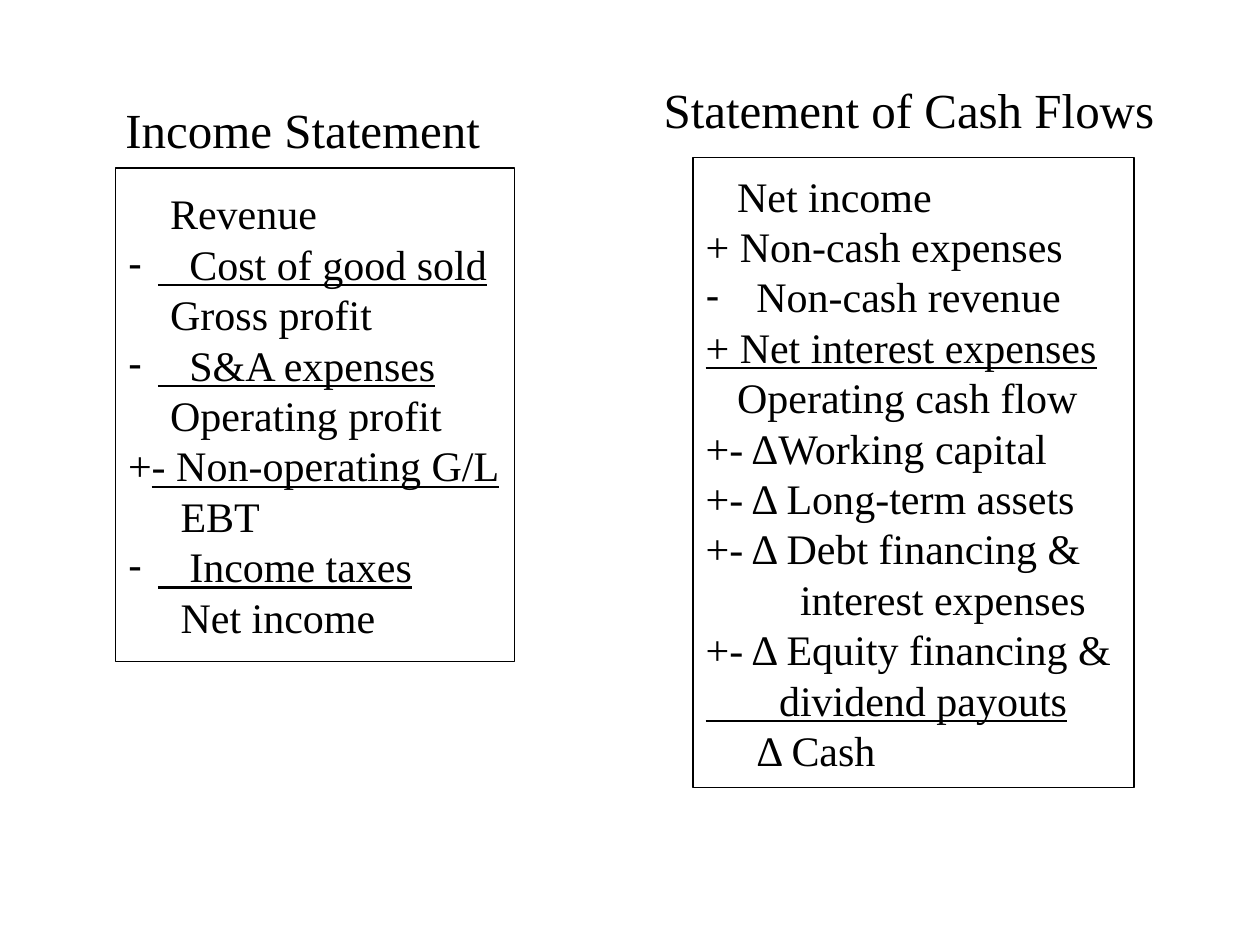
from lxml import etree
from pptx import Presentation
from pptx import util as u
from pptx.dml.color import RGBColor
from pptx.enum import text
from pptx.oxml.ns import qn

BLACK = RGBColor(0, 0, 0)
WHITE = RGBColor(255, 255, 255)

# Each row: words, indent, hang (a dash is set in it), underline.
# Spaces that open an underlined row are part of its drawn rule.
INCOME = [
    ("Revenue", 24, 0, False),
    ("   Cost of good sold", 0, 17, True),
    ("Gross profit", 24, 0, False),
    ("   S&A expenses", 0, 17, True),
    ("Operating profit", 24, 0, False),
    (("+", "- Non-operating G/L"), 0, 0, False),
    ("EBT", 30, 0, False),
    ("   Income taxes", 0, 17, True),
    ("Net income", 30, 0, False),
]
CASH = [
    ("Net income", 18, 0, False),
    ("+ Non-cash expenses", 0, 0, False),
    ("Non-cash revenue", 0, 29, False),
    ("+ Net interest expenses", 0, 0, True),
    ("Operating cash flow", 18, 0, False),
    ("+- ΔWorking capital", 0, 0, False),
    ("+- Δ Long-term assets", 0, 0, False),
    ("+- Δ Debt financing &", 0, 0, False),
    ("interest expenses", 54, 0, False),
    ("+- Δ Equity financing &", 0, 0, False),
    ("       dividend payouts", 0, 0, True),
    ("Δ Cash", 29, 0, False),
]


class Deck:
    font = "Times New Roman"

    def __init__(self, slide):
        self.slide = slide

    def place(self, idx, left, top, width, height, anchor):
        """Move a placeholder and return it."""
        box = self.slide.placeholders[idx]
        box.left, box.top = u.Pt(left), u.Pt(top)
        box.width, box.height = u.Pt(width), u.Pt(height)
        frame = box.text_frame
        frame.word_wrap = False
        frame.auto_size = text.MSO_AUTO_SIZE.NONE
        frame.vertical_anchor = anchor
        return box

    def style(self, para, size, indent=0, hang=0, under=False):
        """Set spacing, bullet and font of a paragraph."""
        para.alignment = text.PP_ALIGN.LEFT
        para.space_before = u.Pt(0)
        props = para._p.get_or_add_pPr()
        props.set("marL", str(u.Pt(indent + hang)))
        props.set("indent", str(-u.Pt(hang)))
        if hang:
            etree.SubElement(props, qn("a:buChar")).set("char", "-")
        else:
            etree.SubElement(props, qn("a:buNone"))
        font = para.font
        font.name, font.size, font.bold = self.font, u.Pt(size), False
        font.color.rgb = BLACK
        if under:
            font.underline = True

    def head(self, idx, words, left, top, width):
        box = self.place(idx, left, top, width, 41, text.MSO_ANCHOR.TOP)
        para = box.text_frame.paragraphs[0]
        para.text = words
        self.style(para, 28)

    def list(self, idx, rows, left, top, width, height):
        box = self.place(idx, left, top, width, height, text.MSO_ANCHOR.MIDDLE)
        box.fill.solid()
        box.fill.fore_color.rgb = WHITE
        box.line.color.rgb = BLACK
        box.line.width = u.Pt(0.75)
        frame = box.text_frame
        for i, (words, indent, hang, under) in enumerate(rows):
            para = frame.add_paragraph() if i else frame.paragraphs[0]
            self.style(para, 24, indent, hang, under)
            if isinstance(words, tuple):
                sign, rest = words
                para.add_run().text = sign
                run = para.add_run()
                run.text = rest
                run.font.underline = True
            else:
                para.add_run().text = words


def main():
    prs = Presentation()
    prs.slide_width, prs.slide_height = u.Pt(720), u.Pt(540)
    # Comparison layout: two headings, each with a list
    slide = prs.slides.add_slide(prs.slide_layouts[4])
    title = slide.shapes.title._element
    title.getparent().remove(title)
    deck = Deck(slide)

    # Income statement
    deck.head(1, "Income Statement", 64.5, 53.5, 222)
    deck.list(2, INCOME, 66, 96, 228, 282)

    # Cash flows
    deck.head(3, "Statement of Cash Flows", 372, 42, 297)
    deck.list(4, CASH, 396, 90, 252, 360)

    prs.save("out.pptx")


if __name__ == "__main__":
    main()
